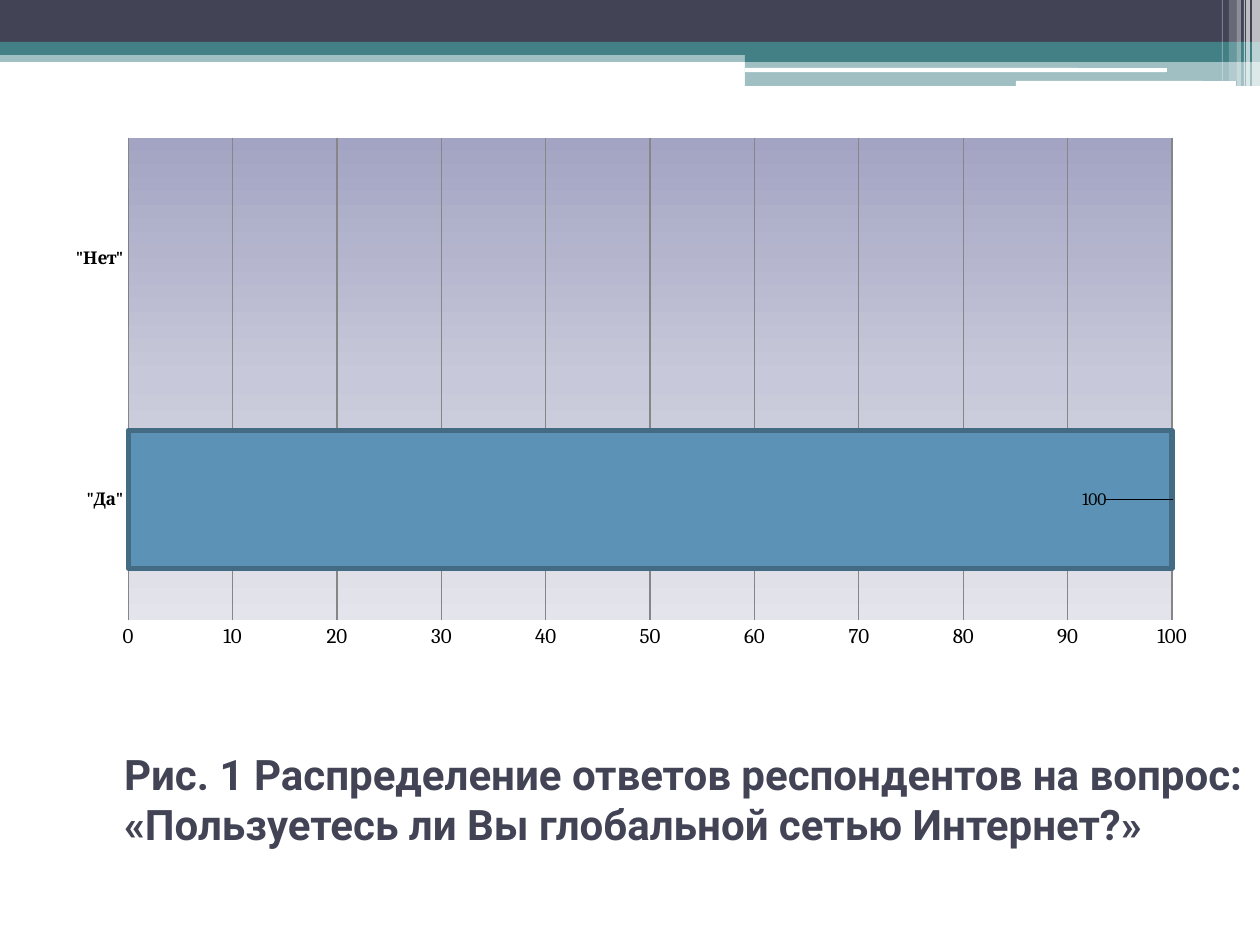
from pptx import Presentation
from pptx.chart.data import CategoryChartData
from pptx.dml.color import RGBColor as RGB
from pptx.enum.chart import XL_CHART_TYPE as CT, XL_LABEL_POSITION as LP, XL_TICK_MARK as TM
from pptx.enum.shapes import MSO_SHAPE as SH
from pptx.enum.text import MSO_ANCHOR, MSO_AUTO_SIZE, PP_ALIGN
from pptx.oxml import parse_xml
from pptx.oxml.ns import nsdecls
from pptx.util import Pt

THEME = {
    "dark": "424456", "teal": "438086", "white": "FFFFFF", "black": "000000",
    "series": "53548A", "bar": "5C92B5", "edge": "446B84", "grid": "868686",
    "plot": [(0, "A3A4C3"), (50, "C7C8D9"), (100, "E4E4EC")],
    "title_font": "Roboto", "chart_font": "Cambria",
    "title": 24, "labels": 10, "scale": 12,
}
TITLE = "Рис. 1 Распределение ответов респондентов на вопрос: «Пользуетесь ли Вы глобальной сетью Интернет?»"
TITLE_BOX = (112, 659, 1148, 171)
ANSWERS = {'"Да"': 100, '"Нет"': 0}
CHART_BOX = (0, 137, 1221, 571)
PLOT_AREA = {"x": 0.105, "y": 0, "w": 0.855, "h": 0.846}
BANDS = [
    (SH.RECTANGLE, (0, 50, 1260, 12), "teal", 50),
    (SH.RECTANGLE, (0, 0, 1260, 43), "dark", 100),
    (SH.RECTANGLE, (0, 42, 1260, 13), "teal", 100),
    (SH.RECTANGLE, (745, 49, 515, 13), "teal", 100),
    (SH.RECTANGLE, (745, 61, 515, 25), "teal", 50),
    (SH.ROUNDED_RECTANGLE, (745, 68, 422, 4), "white", 100),
    (SH.ROUNDED_RECTANGLE, (1016, 81, 220, 5), "white", 100),
]
STRIPES = [(1252, 8, 86, 65), (1246, 4, 86, 65), (1244, 1, 86, 60),
           (1237, 4, 86, 40), (1229, 8, 81, 20), (1222, 1, 81, 30)]


def px(*values):
    return [round(v * 914400 / 126) for v in values]


def color(name):
    return RGB.from_string(THEME[name])


def style(obj, **values):
    for name, value in values.items():
        setattr(obj, name, value)


def paint(fill, name):
    fill.solid()
    fill.fore_color.rgb = color(name)


def add_band(s, kind, box, name, opacity):
    sp = s.shapes.add_shape(kind, *px(*box))
    sp.shadow.inherit = False
    paint(sp.fill, name)
    sp.line.fill.background()
    if opacity < 100:
        rgb = sp.fill._xPr.find(".//{*}srgbClr")
        rgb.append(parse_xml(f'<a:alpha {nsdecls("a")} val="{opacity * 1000}"/>'))


def layout_xml(values, target=""):
    modes = "".join(f'<c:{k}Mode val="edge"/>' for k in "xy") if target else ""
    sizes = "".join(f'<c:{k} val="{v}"/>' for k, v in values.items())
    return parse_xml(f'<c:layout {nsdecls("c")}><c:manualLayout>{target}{modes}{sizes}'
                     '</c:manualLayout></c:layout>')


def add_title(s):
    sp = s.shapes.title
    style(sp, **dict(zip(("left", "top", "width", "height"), px(*TITLE_BOX))))
    tf = sp.text_frame
    tf.text = TITLE
    left, top = px(12, 89)
    style(tf, word_wrap=True, auto_size=MSO_AUTO_SIZE.NONE, vertical_anchor=MSO_ANCHOR.TOP,
          margin_left=left, margin_right=left, margin_top=top, margin_bottom=0)
    p = tf.paragraphs[0]
    p.alignment = PP_ALIGN.LEFT
    font = p.runs[0].font
    style(font, name=THEME["title_font"], size=Pt(THEME["title"]), bold=True)
    font.color.rgb = color("dark")


def add_answers(s):
    data = CategoryChartData()
    data.categories = list(ANSWERS)
    data.add_series("Series 1", list(ANSWERS.values()))
    chart = s.shapes.add_chart(CT.BAR_CLUSTERED, *px(*CHART_BOX), data).chart
    style(chart, has_legend=False, has_title=False)
    style(chart.font, name=THEME["chart_font"], size=Pt(THEME["labels"]))
    chart.font.color.rgb = color("black")

    plot = chart.plots[0]
    style(plot, gap_width=75, overlap=-25, vary_by_categories=False)
    cat, val = chart.category_axis, chart.value_axis
    for axis in (cat, val):
        style(axis, major_tick_mark=TM.NONE, minor_tick_mark=TM.NONE)
    cat.tick_labels.font.bold = True
    cat.format.line.color.rgb = color("grid")
    style(val, minimum_scale=0, maximum_scale=100, major_unit=10, has_major_gridlines=True)
    val.tick_labels.font.size = Pt(THEME["scale"])
    val.format.line.fill.background()
    val.major_gridlines.format.line.color.rgb = color("grid")

    series = plot.series[0]
    paint(series.format.fill, "series")
    point = series.points[0]
    paint(point.format.fill, "bar")
    point.format.line.color.rgb = color("edge")
    point.format.line.width = Pt(3)
    point.data_label.position = LP.INSIDE_END
    point.data_label.font.size = Pt(THEME["labels"])
    label = series._element.find(".//{*}dLbl")
    label.insert(1, layout_xml({"x": -0.05, "y": 0}))

    area = chart._chartSpace.find(".//{*}plotArea")
    for old in area.findall("{*}layout"):
        area.remove(old)
    area.insert(0, layout_xml(PLOT_AREA, '<c:layoutTarget val="inner"/>'))
    stops = "".join(f'<a:gs pos="{pos * 1000}"><a:srgbClr val="{rgb}"/></a:gs>'
                    for pos, rgb in THEME["plot"])
    area.append(parse_xml(f'<c:spPr {nsdecls("c", "a")}><a:gradFill><a:gsLst>{stops}</a:gsLst>'
                          '<a:lin ang="5400000" scaled="0"/></a:gradFill></c:spPr>'))


def main():
    prs = Presentation()
    prs.slide_width, prs.slide_height = px(1260, 945)
    s = prs.slides.add_slide(prs.slide_layouts[5])
    for band in BANDS:
        add_band(s, *band)
    for x, width, height, opacity in STRIPES:
        add_band(s, SH.RECTANGLE, (x, 0, width, height), "white", opacity)
    add_title(s)
    add_answers(s)
    prs.save("out.pptx")


if __name__ == "__main__":
    main()
